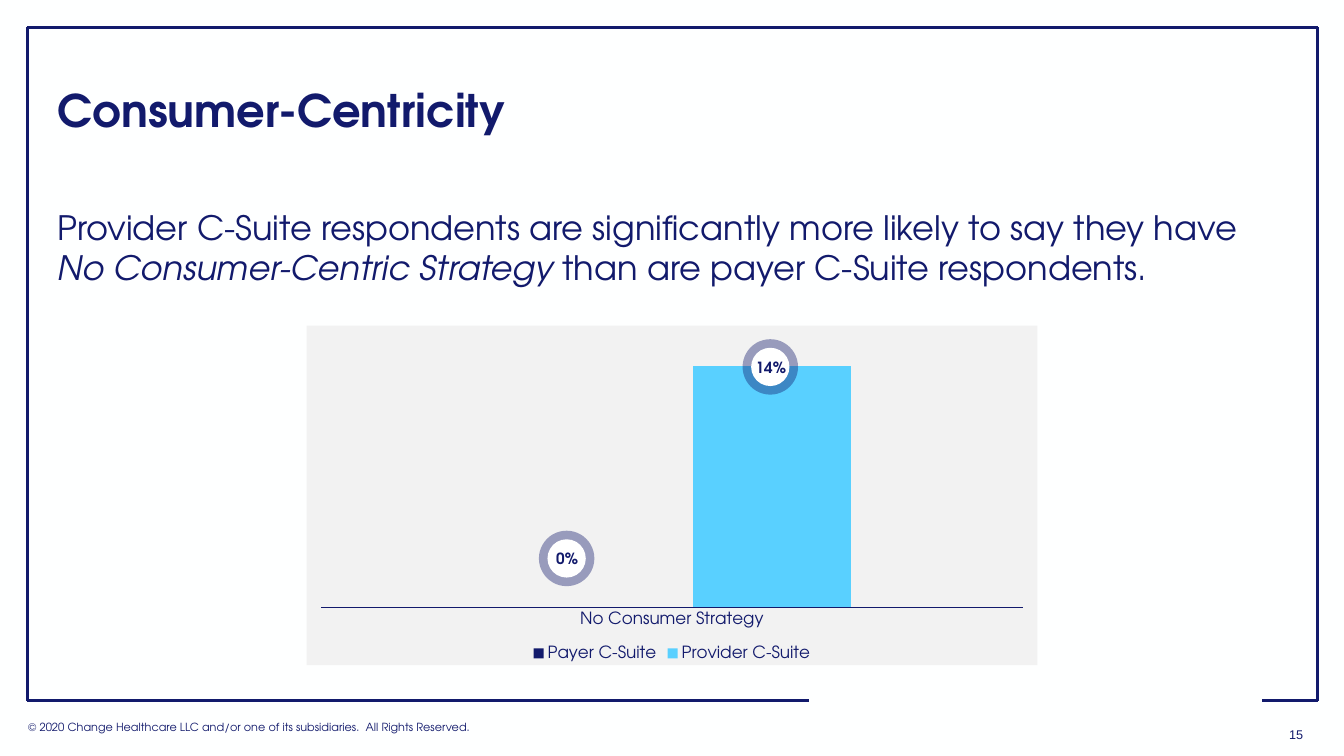
from lxml import etree
from pptx import Presentation
from pptx.chart.data import CategoryChartData
from pptx.dml.color import RGBColor
from pptx.enum.chart import XL_CHART_TYPE as ChartType, XL_LEGEND_POSITION as LegendPos
from pptx.enum.chart import XL_TICK_MARK as TickMark
from pptx.enum.shapes import MSO_CONNECTOR as Connector, MSO_SHAPE as Shape
from pptx.enum.text import MSO_ANCHOR as Anchor, PP_ALIGN as Align
from pptx.oxml import parse_xml
from pptx.oxml.ns import nsdecls, qn
from pptx.util import Inches, Pt

COLORS = {"paper": "FEFFFF", "navy": "121A6C", "sky": "59D0FF",
          "panel": "F2F2F2", "white": "FFFFFF"}
FONT = "TeX Gyre Adventor"


def rgb(name):
    return RGBColor.from_string(COLORS[name])


def style(font, size, bold=False, italic=False, face=FONT):
    font.name = face
    font.size = Pt(size)
    font.bold = bold
    font.italic = italic
    font.color.rgb = rgb("navy")


def add_label(slide, box, runs, size, bold=False, face=FONT,
              align=Align.LEFT, anchor=Anchor.TOP):
    frame = slide.shapes.add_textbox(*map(Inches, box)).text_frame
    frame.word_wrap = True
    frame.vertical_anchor = anchor
    paragraph = frame.paragraphs[0]
    paragraph.alignment = align
    for words, italic in runs:
        run = paragraph.add_run()
        run.text = words
        style(run.font, size, bold, italic, face)


def add_frame(slide, box):
    left, top, width, height = box
    right, bottom = left + width, top + height
    edges = [(left, bottom, 8.02, bottom), (left, top, right, top),
             (right, top, right, bottom), (left, top, left, bottom),
             (12.52, bottom, right, bottom)]
    for ends in edges:
        edge = slide.shapes.add_connector(Connector.STRAIGHT, *map(Inches, ends))
        edge.line.color.rgb = rgb("navy")
        edge.line.width = Pt(2)
        etree.SubElement(edge._element.spPr, qn("a:effectLst"))


def add_footer(slide, box):
    left, top, width, height = box
    notice = "© 2020 Change Healthcare LLC and/or one of its subsidiaries.\u00a0 All Rights Reserved."
    add_label(slide, (left, top, 6.52, 0.24), [(notice, False)], 8)
    add_label(slide, (left + width - 0.41, top - 0.02, 0.41, height), [("15", False)], 9,
              face="Arial", align=Align.CENTER, anchor=Anchor.MIDDLE)


def add_heading(slide, box):
    title = slide.shapes.title
    title.left, title.top, title.width, title.height = map(Inches, box)
    title.text_frame.vertical_anchor = Anchor.MIDDLE
    paragraph = title.text_frame.paragraphs[0]
    paragraph.alignment = Align.LEFT
    paragraph.line_spacing = 0.9
    run = paragraph.add_run()
    run.text = "Consumer-Centricity"
    style(run.font, 32, bold=True)


def add_finding(slide, box):
    add_label(slide, box, [
        ("Provider C-Suite respondents are significantly more likely to say they have ", False),
        ("No Consumer-Centric Strategy", True),
        (" than are payer C-Suite respondents.", False)], 24)


def add_strategy_chart(slide, box):
    data = CategoryChartData()
    data.categories = ["No Consumer Strategy"]
    data.add_series("Payer C-Suite", [0])
    data.add_series("Provider C-Suite", [100])
    chart = slide.shapes.add_chart(ChartType.COLUMN_CLUSTERED, *map(Inches, box), data).chart
    style(chart.font, 10)
    chart.has_title = False
    chart.has_legend = True
    chart.legend.position = LegendPos.BOTTOM
    chart.legend.include_in_layout = False
    style(chart.legend.font, 12)

    answers = chart.category_axis
    answers.major_tick_mark = answers.minor_tick_mark = TickMark.NONE
    answers.format.line.color.rgb = rgb("navy")
    answers.format.line.width = Pt(0.75)
    style(answers.tick_labels.font, 12)

    share = chart.value_axis
    share.visible = False
    share.has_major_gridlines = False
    share.minimum_scale, share.maximum_scale = 0, 111
    share.tick_labels.number_format = "0%"
    share.tick_labels.number_format_is_linked = False

    plot = chart.plots[0]
    plot.vary_by_categories = False
    plot.gap_width, plot.overlap = 219, -27
    for series, color in zip(plot.series, ("navy", "sky")):
        series.format.fill.solid()
        series.format.fill.fore_color.rgb = rgb(color)

    plot_area = chart._chartSpace.chart.plotArea
    for layout in plot_area.findall(qn("c:layout")):
        plot_area.remove(layout)
    plot_area.insert(0, parse_xml(
        f'<c:layout {nsdecls("c")}><c:manualLayout><c:layoutTarget val="inner"/>'
        '<c:xMode val="edge"/><c:yMode val="edge"/><c:x val="0.02"/><c:y val="0.04"/>'
        '<c:w val="0.96"/><c:h val="0.79"/></c:manualLayout></c:layout>'))
    chart._chartSpace.chart.addnext(parse_xml(
        f'<c:spPr {nsdecls("c", "a")}><a:solidFill><a:srgbClr val="{COLORS["panel"]}"/>'
        '</a:solidFill><a:ln><a:noFill/></a:ln></c:spPr>'))


def add_badge(slide, center, percent):
    x, y = center
    for size, color, opacity in ((0.55, "navy", 40), (0.38, "white", 100)):
        disc = slide.shapes.add_shape(Shape.OVAL, Inches(x - size / 2), Inches(y - size / 2),
                                      Inches(size), Inches(size))
        disc.shadow.inherit = False
        disc.line.fill.background()
        disc.fill.solid()
        disc.fill.fore_color.rgb = rgb(color)
        if opacity < 100:
            tint = disc._element.spPr.find(qn("a:solidFill"))[0]
            etree.SubElement(tint, qn("a:alpha"), val=str(opacity * 1000))
    add_label(slide, (x - 0.42, y - 0.15, 0.85, 0.3), [(percent, False)], 11, bold=True,
              align=Align.CENTER, anchor=Anchor.MIDDLE)


def main():
    deck = Presentation()
    deck.slide_width, deck.slide_height = Inches(13.33), Inches(7.5)
    slide = deck.slides.add_slide(deck.slide_layouts[5])
    slide.background.fill.solid()
    slide.background.fill.fore_color.rgb = rgb("paper")
    add_footer(slide, (0.18, 7.1, 12.88, 0.42))
    add_frame(slide, (0.27, 0.27, 12.8, 6.68))
    add_heading(slide, (0.47, 0.4, 12.4, 1.45))
    add_finding(slide, (0.47, 2, 12.4, 1.23))
    add_strategy_chart(slide, (3.04, 3.23, 7.25, 3.37))
    for center, percent in (((5.62, 5.54), "0%"), ((7.64, 3.64), "14%")):
        add_badge(slide, center, percent)
    deck.save("out.pptx")


if __name__ == "__main__":
    main()
